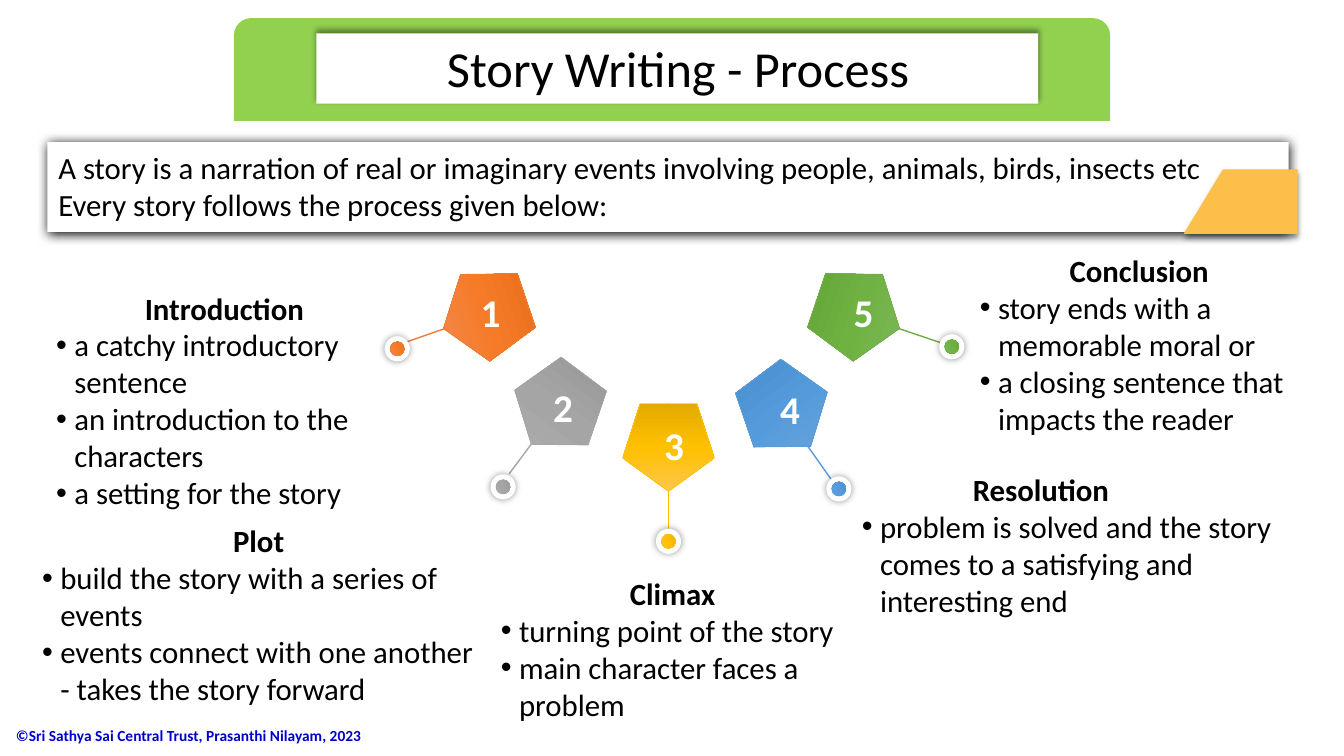
from collections import namedtuple
from lxml.etree import SubElement
from pptx import Presentation
from pptx.dml.color import RGBColor
from pptx.enum.shapes import MSO_CONNECTOR as Line, MSO_SHAPE as Preset
from pptx.enum.text import MSO_ANCHOR as Anchor, PP_ALIGN as Align
from pptx.oxml import parse_xml
from pptx.oxml.ns import nsdecls, qn
from pptx.util import Inches, Pt

WIDTH, HEIGHT = 13.33, 7.5
BLACK, WHITE = RGBColor(0, 0, 0), RGBColor(255, 255, 255)
LIME = RGBColor(0x92, 0xD0, 0x50)
AMBER = RGBColor(0xFC, 0xBF, 0x49)
NAVY = RGBColor(0, 0, 0xCC)

Box = namedtuple("Box", "x y w h")
Step = namedtuple("Step", "line shades pentagon turn start end node")
Topic = namedtuple("Topic", "box heading indent hang points")

PENTAGON_W, PENTAGON_H = 0.91, 0.87
RING, DOT = 0.25, 0.14
NODE_TURN = 243.9

# Outline colour, gradient, pentagon centre and turn, connector ends, node centre
STEPS = [
    Step("ED7D31", ("F18C57", "F67B28", "E56C19"), (4.81, 3.12), 251.4,
         (5.21, 2.98), (4.01, 3.4), (3.94, 3.46)),
    Step("A5A5A5", ("AFAFAF", "A5A5A5", "939393"), (5.53, 4.06), 216.8,
         (5.79, 3.71), (5.05, 4.7), (4.99, 4.83)),
    Step("FFC000", ("FFC64B", "FFC000", "E3AB00"), (6.63, 4.44), 180,
         (6.63, 4), (6.63, 5.25), (6.63, 5.37)),
    Step("5B9BD5", ("71A6DB", "559BDB", "448ACA"), (7.78, 4.08), 143.2,
         (7.52, 3.73), (8.24, 4.75), (8.32, 4.85)),
    Step("70AD47", ("81B861", "6FB242", "62A336"), (8.51, 3.12), 108.6,
         (8.09, 2.98), (9.33, 3.4), (9.44, 3.44)),
]

# \v breaks a line inside a bullet point
TOPICS = [
    Topic(Box(0.46, 2.82, 3.53, 2.32), "Introduction", None, 0.18,
          ["a catchy introductory\vsentence", "an introduction to the\vcharacters",
           "a setting for the story"]),
    Topic(Box(0.32, 5.13, 4.49, 1.95), "Plot", None, 0.18,
          ["build the story with a series of\vevents",
           "events connect with one another\v- takes the story forward"]),
    Topic(Box(4.87, 5.65, 3.6, 1.58), "Climax", None, 0.18,
          ["turning point of the story", "main character faces a\vproblem"]),
    Topic(Box(8.45, 4.62, 4.5, 1.62), "Resolution", 1.1, 0.18,
          ["problem is solved and the story\vcomes to a satisfying and\vinteresting end"]),
    Topic(Box(9.62, 2.45, 3.58, 1.95), "Conclusion", 0.89, 0.18,
          ["story ends with a\vmemorable moral or",
           "a closing sentence that\vimpacts the reader"]),
]


def inches(*lengths):
    return [Inches(length) for length in lengths]


def around(centre, w, h):
    return Box(centre[0] - w / 2, centre[1] - h / 2, w, h)


def within(box, x, y, w, h):
    """Box given as shares of another box."""
    return Box(box.x + x * box.w, box.y + y * box.h, w * box.w, h * box.h)


def add_shadow(shape, alpha, blur, distance, direction):
    effects = SubElement(shape._element.spPr, qn("a:effectLst"))
    shadow = SubElement(effects, qn("a:outerShdw"), blurRad=str(Pt(blur)),
                        dist=str(Pt(distance)), dir=str(direction * 60000),
                        algn="ctr", rotWithShape="0")
    colour = SubElement(shadow, qn("a:srgbClr"), val="000000")
    SubElement(colour, qn("a:alpha"), val=str(alpha * 1000))


def style(shape, fill, shadow=None):
    shape.fill.solid()
    shape.fill.fore_color.rgb = fill
    shape.line.fill.background()
    if shadow:
        add_shadow(shape, *shadow)
    else:
        shape.shadow.inherit = False


def add_filled(slide, preset, box, fill, shadow=None):
    shape = slide.shapes.add_shape(preset, *inches(*box))
    style(shape, fill, shadow)


def add_shaded(slide, preset, box, step, turn):
    """Turned shape with the gradient and outline of its step."""
    shape = slide.shapes.add_shape(preset, *inches(*box))
    shape.rotation = turn
    shape.shadow.inherit = False
    shape.line.color.rgb = RGBColor.from_string(step.line)
    shape.line.width = Pt(0.5)
    shape.fill.background()
    stops = "".join(f'<a:gs pos="{i * 50000}"><a:srgbClr val="{shade}"/></a:gs>'
                    for i, shade in enumerate(step.shades))
    gradient = parse_xml(f'<a:gradFill rotWithShape="1" {nsdecls("a")}><a:gsLst>{stops}'
                         '</a:gsLst><a:lin ang="5400000" scaled="0"/></a:gradFill>')
    properties = shape._element.spPr
    properties.replace(properties.find(qn("a:noFill")), gradient)


def write(paragraph, text, size=22, color=BLACK, bold=False, align=Align.LEFT,
          indent=0, hang=0):
    paragraph.text = text
    paragraph.alignment = align
    properties = paragraph._p.get_or_add_pPr()
    properties.set("marL", str(Inches(indent + hang)))
    properties.set("indent", str(-Inches(hang)))
    if hang:
        SubElement(properties, qn("a:buFont"), typeface="Arial")
        SubElement(properties, qn("a:buChar"), char="•")
    for run in paragraph.runs:
        run.font.name, run.font.size = "Calibri", Pt(size)
        run.font.bold, run.font.color.rgb = bold, color


def add_text(slide, box, lines, anchor=Anchor.TOP, **common):
    """Text box from (text, format) pairs, one paragraph each."""
    frame = slide.shapes.add_textbox(*inches(*box)).text_frame
    frame.word_wrap = True
    frame.vertical_anchor = anchor
    for i, (text, extra) in enumerate(lines):
        paragraph = frame.add_paragraph() if i else frame.paragraphs[0]
        write(paragraph, text, **{**common, **extra})


def add_title(slide, box):
    add_filled(slide, Preset.ROUND_2_SAME_RECTANGLE, box, LIME)
    panel = within(box, 0.094, 0.147, 0.824, 0.686)
    add_filled(slide, Preset.RECTANGLE, panel, WHITE, (40, 4, 3, 270))
    add_text(slide, within(box, 0.226, 0.137, 0.562, 0.696),
             [("Story Writing - Process", {})], size=36, align=Align.CENTER)


def add_definition(slide, box):
    add_filled(slide, Preset.RECTANGLE, box, WHITE, (100, 8.5, 1, 90))
    tab = Box(box.x + box.w - 1.04, box.y + 0.27, 1.13, 0.64)
    right, bottom = tab.x + tab.w, tab.y + tab.h
    corners = [(tab.x + 0.39, tab.y), (right, tab.y), (right, bottom), (tab.x, bottom)]
    points = [inches(*corner) for corner in corners]
    builder = slide.shapes.build_freeform(*points[0])
    builder.add_line_segments(points[1:], close=True)
    style(builder.convert_to_shape(), AMBER, (40, 4, 3, 90))
    add_text(slide, Box(box.x + 0.01, box.y + 0.02, box.w - 0.62, 0.81), [
        ("A story is a narration of real or imaginary events involving people, "
         "animals, birds, insects etc", {}),
        ("Every story follows the process given below:", {})])


def add_step_line(slide, step):
    line = slide.shapes.add_connector(Line.STRAIGHT, *inches(*step.start, *step.end))
    line.line.color.rgb = RGBColor.from_string(step.line)
    line.line.width = Pt(1)
    SubElement(line._element.spPr, qn("a:effectLst"))


def add_step(slide, number, step):
    add_filled(slide, Preset.OVAL, around(step.node, RING, RING), WHITE, (40, 5, 0, 0))
    add_shaded(slide, Preset.OVAL, around(step.node, DOT, DOT), step, NODE_TURN)
    pentagon = around(step.pentagon, PENTAGON_W, PENTAGON_H)
    add_shaded(slide, Preset.REGULAR_PENTAGON, pentagon, step, step.turn)
    add_text(slide, within(pentagon, 0.26, 0.14, 0.6, 0.66), [(str(number), {})],
             anchor=Anchor.MIDDLE, size=28, bold=True, color=WHITE, align=Align.CENTER)


def add_topic(slide, topic):
    place = {"align": Align.CENTER} if topic.indent is None else {"indent": topic.indent}
    add_text(slide, topic.box, [(topic.heading, {"bold": True, **place})]
             + [(point, {"hang": topic.hang}) for point in topic.points])


def main():
    deck = Presentation()
    deck.slide_width, deck.slide_height = inches(WIDTH, HEIGHT)
    slide = deck.slides.add_slide(deck.slide_layouts[6])
    add_text(slide, Box(0.06, 7.09, 3.9, 0.41),
             [("©Sri Sathya Sai Central Trust, Prasanthi Nilayam, 2023", {})],
             anchor=Anchor.MIDDLE, size=11, bold=True, color=NAVY)
    add_title(slide, Box(2.32, 0.18, 8.69, 1.02))
    for step in STEPS:
        add_step_line(slide, step)
    for number, step in enumerate(STEPS, 1):
        add_step(slide, number, step)
    add_definition(slide, Box(0.47, 1.41, 12.31, 0.89))
    for topic in TOPICS:
        add_topic(slide, topic)
    deck.save("out.pptx")


if __name__ == "__main__":
    main()
